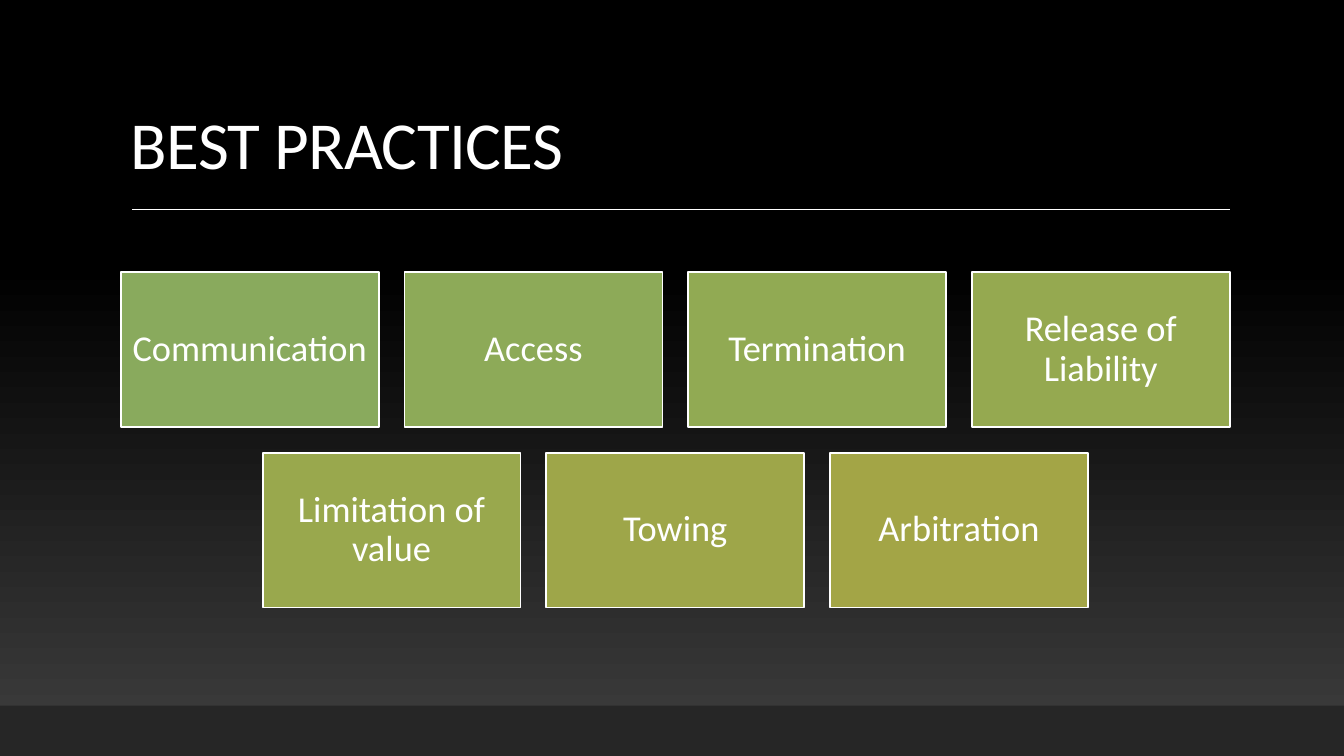
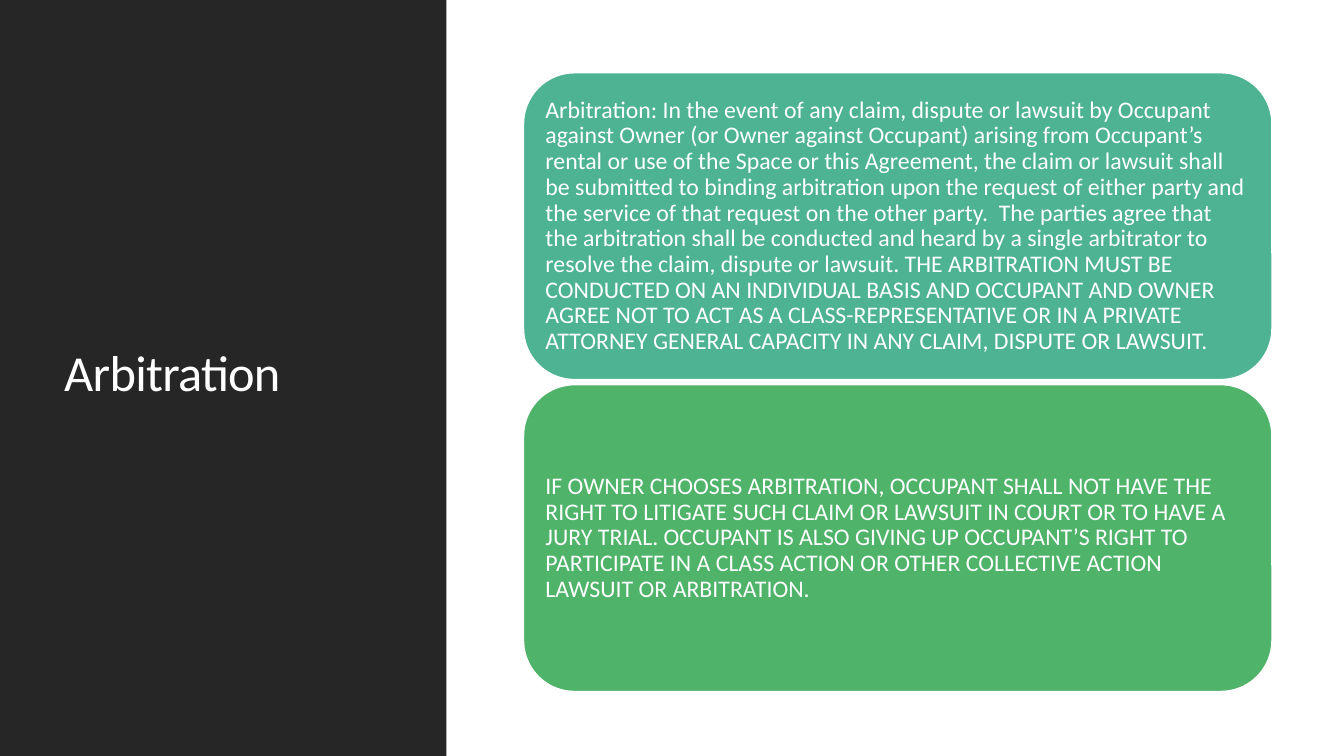
from dataclasses import dataclass

from lxml.etree import SubElement as Sub
from pptx import Presentation
from pptx.dml.color import RGBColor as Rgb
from pptx.enum.shapes import MSO_CONNECTOR as Link
from pptx.enum.shapes import MSO_SHAPE as Kind
from pptx.enum.text import MSO_ANCHOR as Anchor
from pptx.enum.text import PP_ALIGN as Align
from pptx.oxml.ns import qn
from pptx.util import Cm, Pt

WIDE, HIGH = 33.87, 19.05
FONT = "Calibri"
COLORS = {
    "white": "FFFFFF",
    "black": "000000",
    "dark": "262626",
    "gray": "3F3F3F",
}


@dataclass
class Box:
    left: float
    top: float
    width: float
    height: float


@dataclass
class Card:
    label: str
    color: str


TILES = [
    [
        Card("Communication", "89AA5D"),
        Card("Access", "8DAA58"),
        Card("Termination", "91AA53"),
        Card("Release of Liability", "95A950"),
    ],
    [
        Card("Limitation of value", "99A84D"),
        Card("Towing", "9EA649"),
        Card("Arbitration", "A3A546"),
    ],
]

TERMS = [
    Card(
        "Arbitration: In the event of any claim, dispute or lawsuit by Occupant "
        "against Owner (or Owner against Occupant) arising from Occupant’s rental "
        "or use of the Space or this Agreement, the claim or lawsuit shall be "
        "submitted to binding arbitration upon the request of either party and the "
        "service of that request on the other party.  The parties agree that the "
        "arbitration shall be conducted and heard by a single arbitrator to resolve "
        "the claim, dispute or lawsuit. THE ARBITRATION MUST BE CONDUCTED ON AN "
        "INDIVIDUAL BASIS AND OCCUPANT AND OWNER AGREE NOT TO ACT AS A "
        "CLASS-REPRESENTATIVE OR IN A PRIVATE ATTORNEY GENERAL CAPACITY IN ANY "
        "CLAIM, DISPUTE OR LAWSUIT.",
        "4DB392",
    ),
    Card(
        "IF OWNER CHOOSES ARBITRATION, OCCUPANT SHALL NOT HAVE THE RIGHT TO "
        "LITIGATE SUCH CLAIM OR LAWSUIT IN COURT OR TO HAVE A JURY TRIAL. OCCUPANT "
        "IS ALSO GIVING UP OCCUPANT’S RIGHT TO PARTICIPATE IN A CLASS ACTION OR "
        "OTHER COLLECTIVE ACTION LAWSUIT OR ARBITRATION.",
        "4FB369",
    ),
]


def paint(name: str) -> Rgb:
    return Rgb.from_string(COLORS.get(name, name))


def place(box: Box) -> list[Cm]:
    return [Cm(box.left), Cm(box.top), Cm(box.width), Cm(box.height)]


def write(shape, text: str, *, size: float, align=Align.LEFT,
          anchor=Anchor.MIDDLE, inset: float = 0.25, track: int = 0) -> None:
    frame = shape.text_frame
    frame.word_wrap = True
    frame.vertical_anchor = anchor
    frame.margin_left = frame.margin_right = Cm(inset)
    frame.margin_top = frame.margin_bottom = Cm(min(inset, 0.18))
    para = frame.paragraphs[0]
    para.alignment = align
    para.line_spacing = 0.9
    run = para.add_run()
    run.text = text
    run.font.name = FONT
    run.font.size = Pt(size)
    run.font.color.rgb = paint("white")
    if track:
        run.font._element.set("spc", str(track))


def block(slide, box: Box, color: str, kind=Kind.RECTANGLE, edge: bool = False):
    shape = slide.shapes.add_shape(kind, *place(box))
    shape.shadow.inherit = False
    shape.fill.solid()
    shape.fill.fore_color.rgb = paint(color)
    if edge:
        shape.line.color.rgb = paint("white")
        shape.line.width = Pt(1.25)
    else:
        shape.line.fill.background()
    return shape


def title(slide, text: str, box: Box, size: float, anchor=Anchor.MIDDLE) -> None:
    shape = slide.shapes.add_textbox(*place(box))
    write(shape, text, size=size, anchor=anchor, track=-50)


def rule(slide, left: float, right: float, top: float) -> None:
    line = slide.shapes.add_connector(
        Link.STRAIGHT, Cm(left), Cm(top), Cm(right), Cm(top))
    line.line.color.rgb = paint("white")
    line.line.width = Pt(1)
    Sub(line._element.spPr, qn("a:effectLst"))


def fade(slide) -> None:
    fill = slide.background.fill
    fill.gradient()
    fill.gradient_angle = 90
    for stop, name, spot in zip(fill.gradient_stops, ("gray", "black"), (0, 0.65)):
        stop.color.rgb = paint(name)
        stop.position = spot


def tiles(slide) -> None:
    width, height, gap = 6.5, 3.9, 0.65
    mid, top = 17.02, 6.86
    for row, cards in enumerate(TILES):
        left = mid - (len(cards) * (width + gap) - gap) / 2
        for col, card in enumerate(cards):
            box = Box(left + col * (width + gap), top + row * (height + gap),
                      width, height)
            shape = block(slide, box, card.color, edge=True)
            write(shape, card.label, size=26, align=Align.CENTER)


def terms(slide) -> None:
    height, gap = 7.74, 0.12
    for row, card in enumerate(TERMS):
        box = Box(13.19, 1.83 + row * (height + gap), 18.87, height)
        shape = block(slide, box, card.color, Kind.ROUNDED_RECTANGLE, edge=True)
        write(shape, card.label, size=17, inset=0.18)


def main() -> None:
    deck = Presentation()
    deck.slide_width, deck.slide_height = Cm(WIDE), Cm(HIGH)
    blank = deck.slide_layouts[6]

    slide = deck.slides.add_slide(blank)
    fade(slide)
    title(slide, "BEST PRACTICES", Box(3.05, 0.79, 27.94, 4.04), 48, Anchor.BOTTOM)
    rule(slide, 3.33, 31, 5.28)
    block(slide, Box(0, 17.78, WIDE, 1.27), "dark")
    tiles(slide)

    slide = deck.slides.add_slide(blank)
    block(slide, Box(0, 0, 11.25, HIGH), "dark")
    title(slide, "Arbitration", Box(1.37, 1.45, 8.56, 16.03), 36)
    terms(slide)

    deck.save("out.pptx")


if __name__ == "__main__":
    main()
